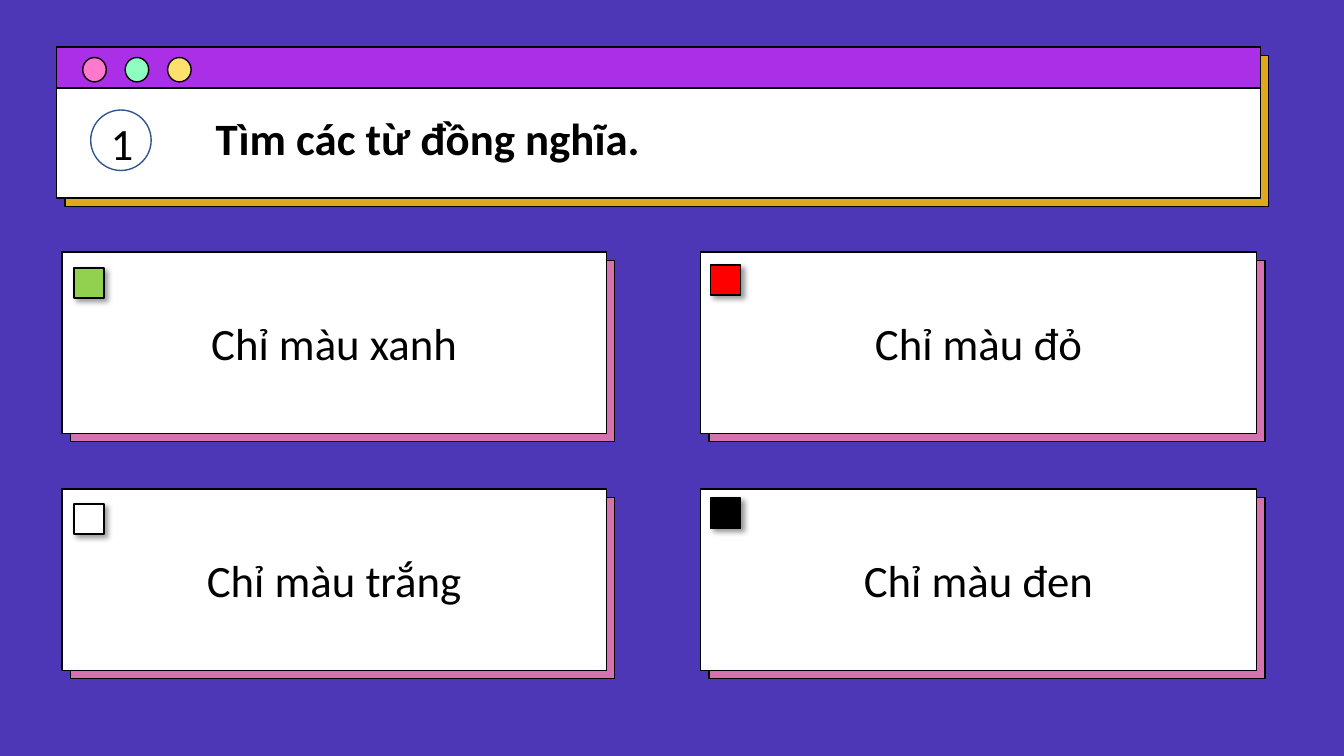
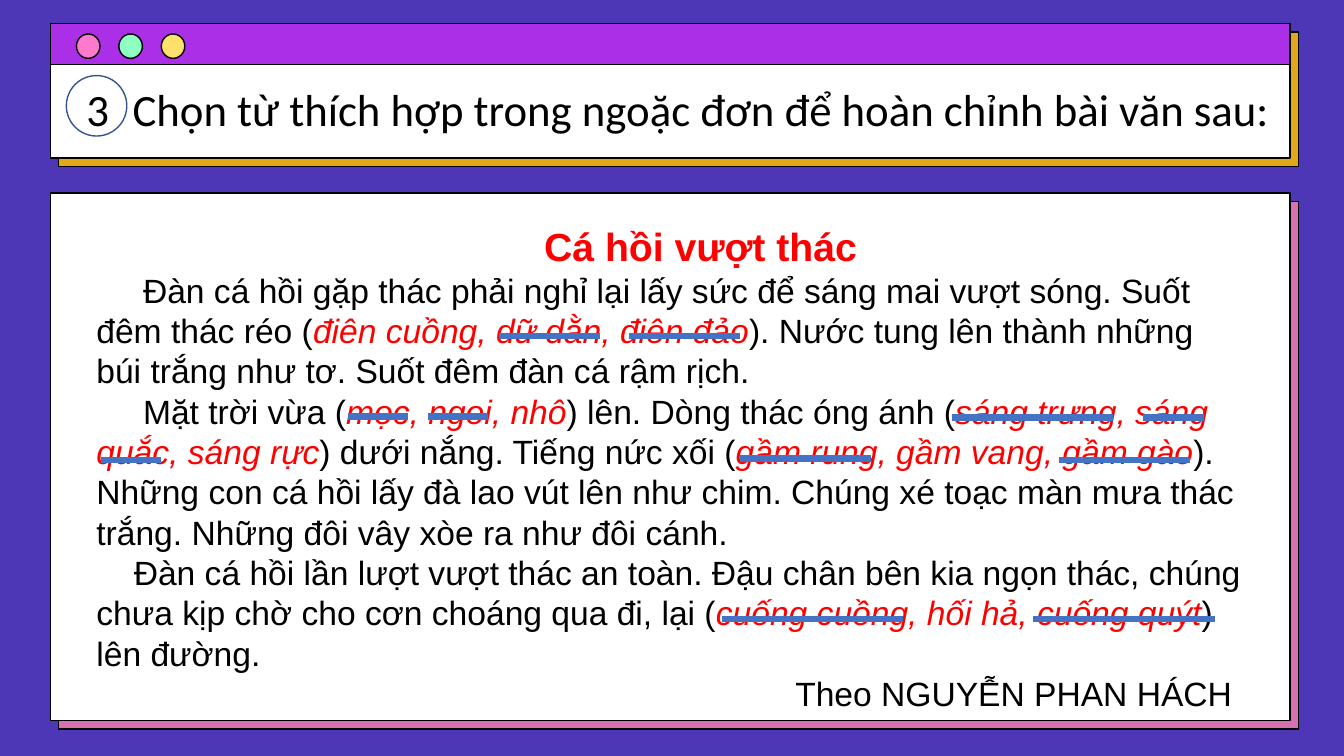
from dataclasses import dataclass
from typing import Any, Optional

import lxml.etree
import pptx
import pptx.dml.color
import pptx.enum.shapes
import pptx.enum.text
import pptx.oxml.ns
import pptx.util

COLUMNS, ROWS = 160, 90
CELL = pptx.util.Inches(1 / 12)
PANEL_DEPTH = 1
BAND_HEIGHT = 4.9
DOT_PITCH = 5.05
BADGE_SIZE = 7.2
CHIP_SIZE = 3.6
LINE_HEIGHT = 7.7

COLORS: dict[str, str] = {
    "background": "4E37B7",
    "gold": "FFC000",
    "pink": "D672B0",
    "band": "AA2FE6",
    "white": "FFFFFF",
    "black": "000000",
    "red": "FF0000",
    "green": "92D050",
    "dot_pink": "FF79CD",
    "dot_mint": "8EFFC0",
    "dot_yellow": "FEE06D",
    "badge": "325491",
    "strike": "4472C4",
}
DOTS = ("dot_pink", "dot_mint", "dot_yellow")

HEADING: dict[str, Any] = {"name": "Calibri", "size": pptx.util.Pt(32)}
BOLD_HEADING = HEADING | {"bold": True}
STORY: dict[str, Any] = {"name": "Arial", "size": pptx.util.Pt(24)}
STORY_TITLE = STORY | {"size": pptx.util.Pt(28), "bold": True}
CHOICE = STORY | {"italic": True}

SHAPES = pptx.enum.shapes.MSO_SHAPE
ALIGN = pptx.enum.text.PP_ALIGN
ANCHOR = pptx.enum.text.MSO_ANCHOR


@dataclass(frozen=True)
class Area:
    column: float
    row: float
    columns: float
    rows: float

    def inner(self, column: float, row: float, columns: float, rows: float) -> "Area":
        return Area(self.column + column, self.row + row, columns, rows)

    def emu(self) -> list[int]:
        return [cells(n) for n in (self.column, self.row, self.columns, self.rows)]


@dataclass(frozen=True)
class Header:
    window: Area
    number: str
    badge: tuple[float, float]
    title: str
    title_area: Area
    title_format: dict[str, Any]


@dataclass(frozen=True)
class Card:
    area: Area
    label: str
    chip_color: str
    chip_offset: tuple[float, float]


@dataclass(frozen=True)
class Strike:
    column: float
    row: float
    columns: float


@dataclass(frozen=True)
class StoryParagraph:
    phrases: tuple[str, ...]
    margin: float = 0
    indent: float = 0
    align: Any = ALIGN.LEFT
    font_format: Optional[dict[str, Any]] = None
    color: str = "black"


def cells(count: float) -> int:
    return round(count * CELL)


def rgb(color: str) -> pptx.dml.color.RGBColor:
    return pptx.dml.color.RGBColor.from_string(COLORS[color])


def add_run(paragraph: Any, text: str, font_format: dict[str, Any], color: str = "black") -> None:
    run = paragraph.add_run()
    run.text = text
    for attribute, value in font_format.items():
        setattr(run.font, attribute, value)
    run.font.color.rgb = rgb(color)


def add_block(slide: Any, area: Area, fill: Optional[str], kind: Any = SHAPES.RECTANGLE,
              line: str = "black") -> Any:
    block = slide.shapes.add_shape(kind, *area.emu())
    block.shadow.inherit = False
    if fill:
        block.fill.solid()
        block.fill.fore_color.rgb = rgb(fill)
    else:
        block.fill.background()
    block.line.color.rgb = rgb(line)
    block.line.width = pptx.util.Pt(1)
    return block


def add_text_area(slide: Any, area: Area) -> Any:
    frame = slide.shapes.add_textbox(*area.emu()).text_frame
    frame.word_wrap = True
    return frame


def add_child(parent: Any, tag: str, **attributes: str) -> Any:
    return lxml.etree.SubElement(parent, pptx.oxml.ns.qn(tag), attributes)


def add_panel(slide: Any, area: Area, back_color: str, opacity: int = 100) -> Any:
    back = add_block(slide, area.inner(PANEL_DEPTH, PANEL_DEPTH, area.columns, area.rows), back_color)
    if opacity < 100:
        fill_color = back._element.spPr.find(pptx.oxml.ns.qn("a:solidFill"))[0]
        add_child(fill_color, "a:alpha", val=str(opacity * 1000))
    return add_block(slide, area, "white")


def add_header(slide: Any, header: Header) -> None:
    window = header.window
    add_panel(slide, window, "gold", 83)
    add_block(slide, window.inner(0, 0, window.columns, BAND_HEIGHT), "band")
    for index, color in enumerate(DOTS):
        add_block(slide, window.inner(3.1 + index * DOT_PITCH, 1.25, 2.8, 2.9), color, SHAPES.OVAL)
    title = add_text_area(slide, header.title_area)
    add_run(title.paragraphs[0], header.title, header.title_format)
    badge = Area(*header.badge, BADGE_SIZE, BADGE_SIZE)
    add_block(slide, badge, None, SHAPES.OVAL, "badge")
    number = add_text_area(slide, badge.inner(1.2, 0.1, 8.4, LINE_HEIGHT))
    add_run(number.paragraphs[0], header.number, HEADING)


def add_card(slide: Any, card: Card) -> None:
    frame = add_panel(slide, card.area, "pink").text_frame
    frame.vertical_anchor = ANCHOR.MIDDLE
    frame.paragraphs[0].alignment = ALIGN.CENTER
    add_run(frame.paragraphs[0], card.label, HEADING)
    chip = add_block(slide, card.area.inner(*card.chip_offset, CHIP_SIZE, CHIP_SIZE), card.chip_color)
    effects = chip._element.spPr.find(pptx.oxml.ns.qn("a:effectLst"))
    shadow = add_child(effects, "a:outerShdw", blurRad=str(pptx.util.Pt(4)),
                       dist=str(pptx.util.Pt(3)), dir="2700000", algn="tl", rotWithShape="0")
    add_child(add_child(shadow, "a:srgbClr", val=COLORS["black"]), "a:alpha", val="40000")


def add_story(slide: Any, area: Area, story: tuple[StoryParagraph, ...]) -> None:
    frame = add_text_area(slide, area)
    for index, entry in enumerate(story):
        paragraph = frame.add_paragraph() if index else frame.paragraphs[0]
        paragraph.alignment = entry.align
        properties = paragraph._p.get_or_add_pPr()
        properties.set("marL", str(cells(entry.margin)))
        properties.set("indent", str(cells(entry.indent)))
        for position, phrase in enumerate(entry.phrases):
            if position % 2:
                add_run(paragraph, phrase, CHOICE, "red")
            else:
                add_run(paragraph, phrase, entry.font_format or STORY, entry.color)


def add_strike(slide: Any, strike: Strike) -> None:
    row = cells(strike.row)
    connector = slide.shapes.add_connector(
        pptx.enum.shapes.MSO_CONNECTOR.STRAIGHT,
        cells(strike.column), row, cells(strike.column + strike.columns), row)
    connector.line.color.rgb = rgb("strike")
    connector.line.width = pptx.util.Pt(4.5)
    add_child(connector._element.spPr, "a:effectLst")


def add_page(deck: Any, header: Header) -> Any:
    slide = deck.slides.add_slide(deck.slide_layouts[6])
    slide.background.fill.solid()
    slide.background.fill.fore_color.rgb = rgb("background")
    add_header(slide, header)
    return slide


SYNONYMS = Header(Area(6.75, 5.6, 143.3, 18), "1", (10.8, 13.1), "Tìm các từ đồng nghĩa.",
                  Area(24.5, 12.6, 76.2, LINE_HEIGHT), BOLD_HEADING)
COMPLETION = Header(Area(6, 2.8, 147.6, 16), "3", (7.9, 9),
                    "Chọn từ thích hợp trong ngoặc đơn để hoàn chỉnh bài văn sau:",
                    Area(14.6, 9.1, 141, LINE_HEIGHT), HEADING)

LEFT, RIGHT = (7.4, 64.8), (83.4, 66.2)
TOP, BOTTOM = 30, 58.2


def card_area(side: tuple[float, float], row: float) -> Area:
    return Area(side[0], row, side[1], 21.6)


CARDS = (
    Card(card_area(LEFT, TOP), "Chỉ màu xanh", "green", (1.4, 1.9)),
    Card(card_area(RIGHT, TOP), "Chỉ màu đỏ", "red", (1.2, 1.55)),
    Card(card_area(LEFT, BOTTOM), "Chỉ màu trắng", "white", (1.4, 1.8)),
    Card(card_area(RIGHT, BOTTOM), "Chỉ màu đen", "black", (1.2, 1.1)),
)

SALMON_STORY = (
    StoryParagraph(("Cá hồi vượt thác",), margin=7.2, align=ALIGN.CENTER,
                   font_format=STORY_TITLE, color="red"),
    StoryParagraph((
        "Đàn cá hồi gặp thác phải nghỉ lại lấy sức để sáng mai vượt sóng. Suốt đêm thác réo (",
        "điên cuồng, dữ dằn, điên đảo",
        "). Nước tung lên thành những búi trắng như tơ. Suốt đêm đàn cá rậm rịch."), indent=5.55),
    StoryParagraph((
        "Mặt trời vừa (",
        "mọc, ngoi, nhô",
        ") lên. Dòng thác óng ánh (",
        "sáng trưng, sáng quắc, sáng rực",
        ") dưới nắng. Tiếng nức xối (",
        "gầm rung, gầm vang, gầm gào",
        "). Những con cá hồi lấy đà lao vút lên như chim. Chúng xé toạc màn mưa thác trắng. "
        "Những đôi vây xòe ra như đôi cánh."), indent=5.55),
    StoryParagraph((
        "Đàn cá hồi lần lượt vượt thác an toàn. Đậu chân bên kia ngọn thác, chúng chưa kịp chờ "
        "cho cơn choáng qua đi, lại (",
        "cuống cuồng, hối hả, cuống quýt",
        ") lên đường."), indent=4.45),
    StoryParagraph(("Theo NGUYỄN PHAN HÁCH",), margin=83.2),
)

STRIKES = (
    Strike(59.4, 40, 12), Strike(74.9, 40, 13.2),
    Strike(41.4, 49.6, 7.2), Strike(50.9, 49.6, 7.2),
    Strike(113.3, 49.7, 19.2), Strike(136.1, 49.7, 7.2),
    Strike(12, 54.8, 7.2), Strike(88.1, 54.6, 15.6), Strike(126.1, 54.8, 15.6),
    Strike(85.9, 73.7, 21.6), Strike(123, 73.7, 21.6),
)


def main() -> None:
    deck = pptx.Presentation()
    deck.slide_width, deck.slide_height = cells(COLUMNS), cells(ROWS)

    synonyms = add_page(deck, SYNONYMS)
    for card in CARDS:
        add_card(synonyms, card)

    completion = add_page(deck, COMPLETION)
    add_panel(completion, Area(6, 23, 147.6, 62.8), "pink")
    add_story(completion, Area(10.3, 25.9, 139, 63.8), SALMON_STORY)
    for strike in STRIKES:
        add_strike(completion, strike)

    deck.save("out.pptx")


if __name__ == "__main__":
    main()
